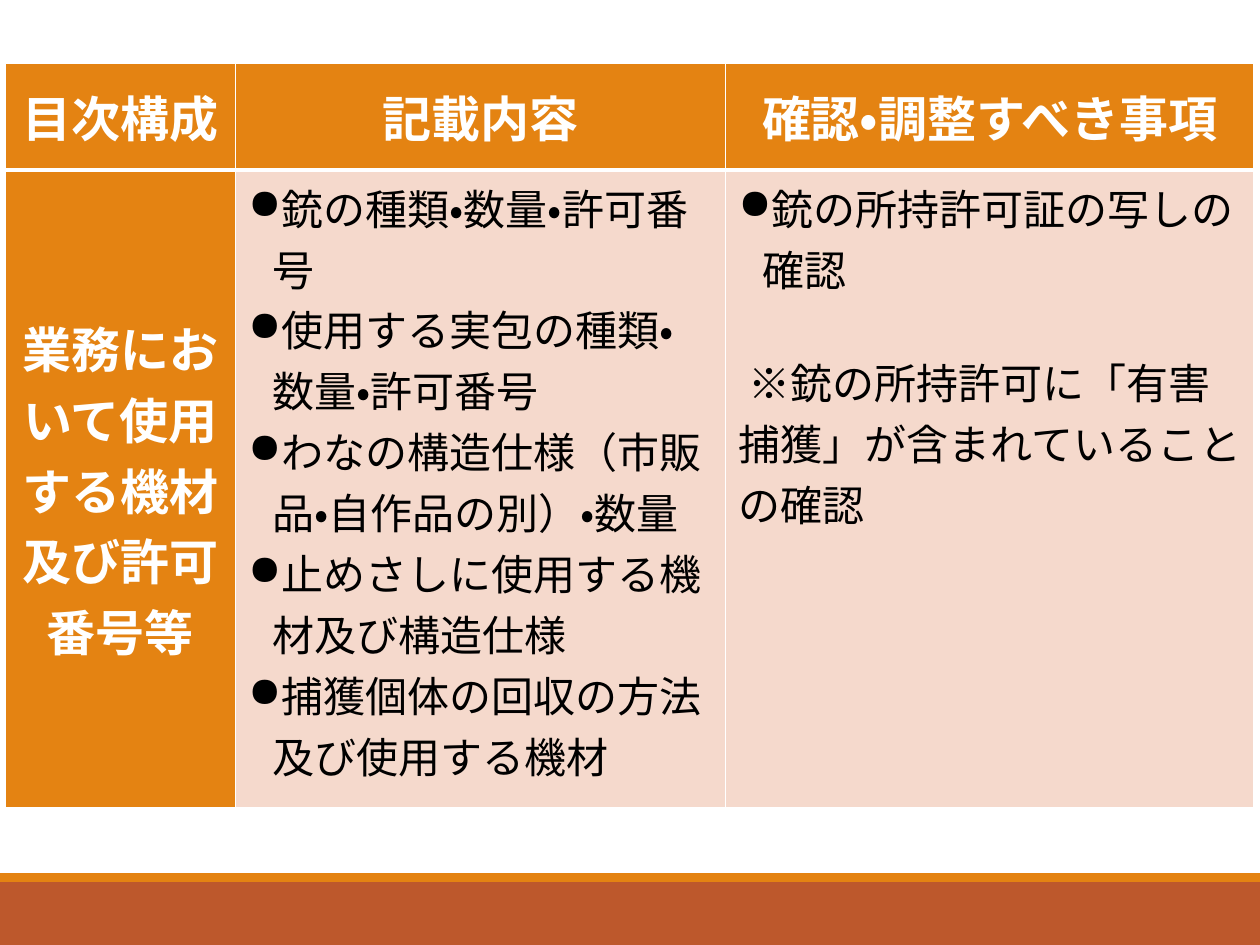
from lxml.etree import SubElement
from pptx import Presentation
from pptx.dml.color import RGBColor
from pptx.enum.lang import MSO_LANGUAGE_ID as Lang
from pptx.enum.shapes import MSO_SHAPE as Kind
from pptx.enum.text import MSO_ANCHOR as Anchor, PP_ALIGN as Align
from pptx.oxml import parse_xml
from pptx.oxml.ns import nsdecls, qn
from pptx.util import Inches, Pt

HEADS = ["目次構成", "記載内容", "確認・調整すべき事項"]
TOPIC = "業務において使用する機材及び許可番号等"
ITEMS = [
    "銃の種類・数量・許可番号",
    "使用する実包の種類・数量・許可番号",
    "わなの構造仕様（市販品・自作品の別）・数量",
    "止めさしに使用する機材及び構造仕様",
    "捕獲個体の回収の方法及び使用する機材",
]
CHECKS = ["銃の所持許可証の写しの確認"]
NOTE = "※銃の所持許可に「有害捕獲」が含まれていることの確認"

COLS = [1.83, 3.89, 4.19]
ROWS = [0.85, 5.06]
BANDS = [(7, 0.5, "rust"), (6.93, 0.07, "orange")]
THEME = {
    "orange": "E48312", "rust": "BD582C", "pale": "F5D9CC",
    "white": "FFFFFF", "black": "000000",
    "font": "Calibri", "head": 28, "body": 24,
}


def color(name):
    """Return a theme colour."""
    return RGBColor.from_string(THEME[name])


def add_band(slide, top, high, fill):
    """Draw one full-width footer band."""
    band = slide.shapes.add_shape(Kind.RECTANGLE, 0, Inches(top), Inches(10), Inches(high))
    band.shadow.inherit = False
    band.fill.solid()
    band.fill.fore_color.rgb = color(fill)
    band.line.fill.background()


def style(cell, fill, top, low):
    """Fill a cell and rule its four sides."""
    cell.fill.solid()
    cell.fill.fore_color.rgb = color(fill)
    props = cell._tc.get_or_add_tcPr()
    for spot, (side, wide) in enumerate([("L", 1), ("R", 1), ("T", top), ("B", low)]):
        props.insert(spot, parse_xml(
            f'<a:ln{side} {nsdecls("a")} w="{Pt(wide)}"><a:solidFill>'
            f'<a:srgbClr val="{THEME["white"]}"/></a:solidFill></a:ln{side}>'))


def add_run(para, text, size, tint, bold):
    """Add one run in the theme font."""
    run = para.add_run()
    run.text = text
    font = run.font
    font.name, font.size, font.bold = THEME["font"], Pt(THEME[size]), bold
    font.color.rgb = color(tint)
    font.language_id = Lang.JAPANESE


def add_title(cell, text, top, low):
    """Write a bold centred heading cell."""
    style(cell, "orange", top, low)
    cell.vertical_anchor = Anchor.MIDDLE
    para = cell.text_frame.paragraphs[0]
    para.alignment = Align.CENTER
    add_run(para, text, "head", "white", True)


def add_list(cell, items):
    """Write a bulleted list into a cell."""
    style(cell, "pale", 3, 1)
    frame = cell.text_frame
    for spot, text in enumerate(items):
        para = frame.add_paragraph() if spot else frame.paragraphs[0]
        props = para._p.get_or_add_pPr()
        props.set("marL", str(Inches(0.19)))
        props.set("indent", str(Inches(-0.19)))
        SubElement(props, qn("a:buChar"), char="●")
        add_run(para, text, "body", "black", False)


def add_note(cell, text):
    """Add a spaced, indented note below a list."""
    para = cell.text_frame.add_paragraph()
    para.space_before = Pt(30)
    para._p.get_or_add_pPr().set("indent", str(Inches(0.08)))
    add_run(para, text, "body", "black", False)


def main():
    """Build the slide and save it."""
    deck = Presentation()
    deck.slide_width, deck.slide_height = Inches(10), Inches(7.5)
    slide = deck.slides.add_slide(deck.slide_layouts[6])
    for band in BANDS:
        add_band(slide, *band)
    grid = slide.shapes.add_table(
        len(ROWS), len(COLS), Inches(0.04), Inches(0.5),
        Inches(sum(COLS)), Inches(sum(ROWS))).table
    for col, wide in zip(grid.columns, COLS):
        col.width = Inches(wide)
    for row, high in zip(grid.rows, ROWS):
        row.height = Inches(high)
    for spot, text in enumerate(HEADS):
        add_title(grid.cell(0, spot), text, 1, 3)
    add_title(grid.cell(1, 0), TOPIC, 3, 1)
    add_list(grid.cell(1, 1), ITEMS)
    add_list(grid.cell(1, 2), CHECKS)
    add_note(grid.cell(1, 2), NOTE)
    deck.save("out.pptx")


if __name__ == "__main__":
    main()
